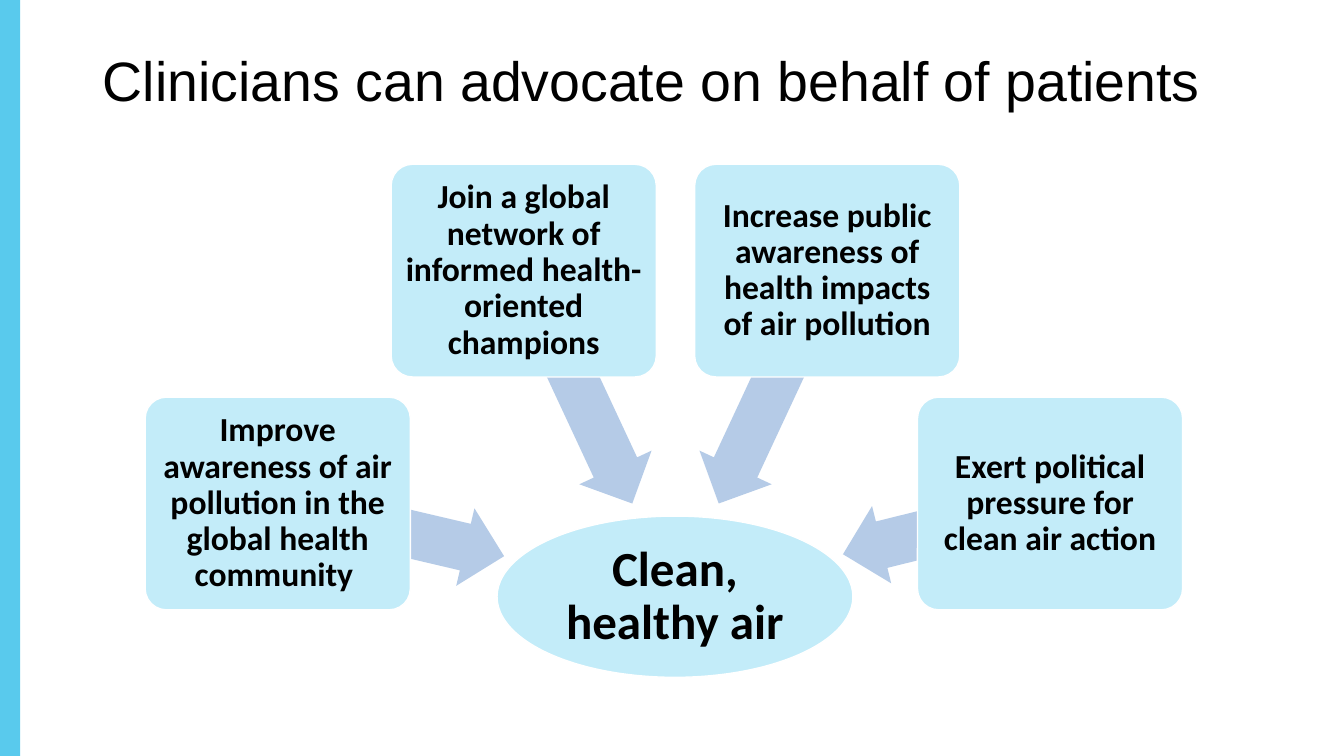
from pptx import Presentation
from pptx.dml.color import RGBColor as RGB
from pptx.enum.shapes import MSO_SHAPE as Shape
from pptx.enum.text import MSO_ANCHOR as Anchor, PP_ALIGN as Align
from pptx.util import Inches, Pt

COLORS = {"bar": "59CAED", "panel": "C3ECF9", "arrow": "B5CBE7",
          "edge": "FFFFFF", "text": "000000"}

prs = Presentation()
prs.slide_width, prs.slide_height = Inches(13.33), Inches(7.5)
COL, ROW = prs.slide_width / 1333, prs.slide_height / 750
slide = prs.slides.add_slide(prs.slide_layouts[5])


def add_block(kind, left, top, width, height, fill, edge=None):
    block = slide.shapes.add_shape(kind, round(left * COL), round(top * ROW),
                                   round(width * COL), round(height * ROW))
    block.shadow.inherit = False
    block.fill.solid()
    block.fill.fore_color.rgb = RGB.from_string(COLORS[fill])
    if edge:
        block.line.color.rgb = RGB.from_string(COLORS[edge])
        block.line.width = Pt(1)
    else:
        block.line.fill.background()
    return block


def write(frame, text, size, font, align, bold, inset):
    frame.word_wrap = True
    frame.vertical_anchor = Anchor.MIDDLE
    frame.margin_left = frame.margin_right = Inches(inset)
    frame.margin_top = frame.margin_bottom = Inches(inset)
    line = frame.paragraphs[0]
    line.alignment = align
    line.line_spacing = 0.9
    run = line.add_run()
    run.text = text
    run.font.size = Pt(size)
    run.font.name = font
    run.font.bold = bold
    run.font.color.rgb = RGB.from_string(COLORS["text"])


add_block(Shape.RECTANGLE, 0, 0, 20, 750, "bar")

title = slide.shapes.title
title.left, title.top = round(92 * COL), round(40 * ROW)
title.width, title.height = round(1150 * COL), round(85 * ROW)
write(title.text_frame, "Clinicians can advocate on behalf of patients",
      39.6, "Arial", Align.LEFT, False, 0.05)
title.text_frame.margin_left = title.text_frame.margin_right = Inches(0.1)

goal = add_block(Shape.OVAL, 493, 512, 353, 160, "panel", "edge")
write(goal.text_frame, "Clean, healthy air", 35, "Calibri", Align.CENTER, True, 0.02)

UPPER, LOWER = 163, 394
ACTION_W, ACTION_H, ARROW_H = 263, 211, 79
actions = [
    ("Improve awareness of air pollution in the global health community ",
     144, LOWER, (273, 486, 230, 193.2)),
    ("Join a global network of informed health-oriented champions",
     388, UPPER, (445, 344, 256, 245)),
    ("Increase public awareness of health impacts of air pollution",
     689, UPPER, (639, 344, 256, 295)),
    ("Exert political pressure for clean air action",
     910, LOWER, (833, 485, 211, 346.1)),
]
for text, left, top, (arrow_left, arrow_top, arrow_length, angle) in actions:
    arrow = add_block(Shape.LEFT_ARROW, arrow_left, arrow_top,
                      arrow_length, ARROW_H, "arrow")
    arrow.adjustments[0], arrow.adjustments[1] = 0.6, 0.5
    arrow.rotation = angle

    action = add_block(Shape.ROUNDED_RECTANGLE, left, top,
                       ACTION_W, ACTION_H, "panel", "edge")
    action.adjustments[0] = 0.1
    write(action.text_frame, text, 24, "Calibri", Align.CENTER, True, 0.05)

prs.save("out.pptx")
